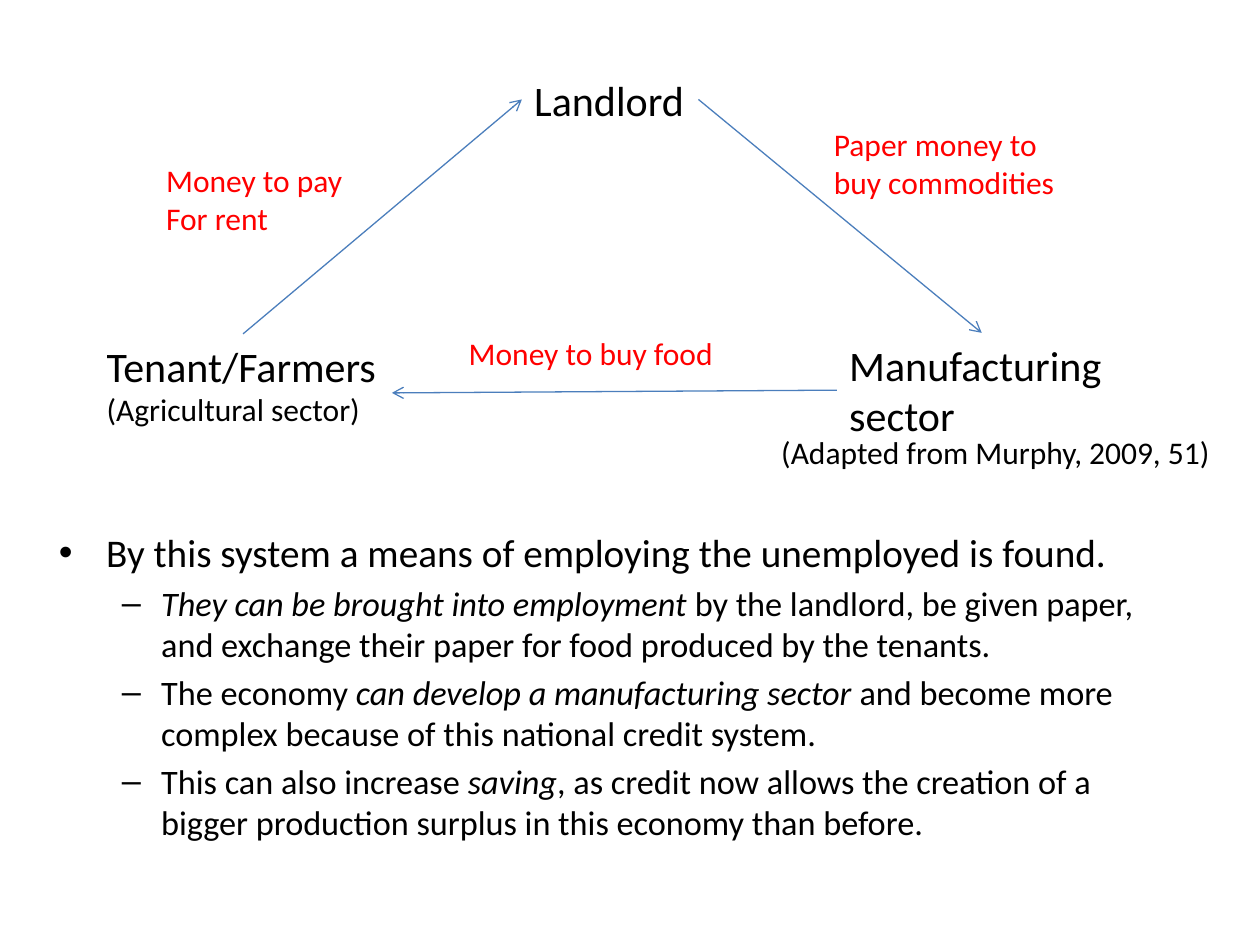
from lxml import etree
from pptx import Presentation
from pptx.dml.color import RGBColor
from pptx.enum.shapes import MSO_CONNECTOR
from pptx.enum.text import MSO_AUTO_SIZE
from pptx.oxml.ns import qn
from pptx.util import Cm, Pt

STRAIGHT = MSO_CONNECTOR.STRAIGHT
FIT_SHAPE = MSO_AUTO_SIZE.SHAPE_TO_FIT_TEXT
NO_FIT = MSO_AUTO_SIZE.NONE
TOP, LEFT, RIGHT = 0, 1, 3
COLORS = {"text": "000000", "flow": "FF0000", "arrow": "4B7EBC"}
BULLET_LEVELS = [
    {"size": 22.4, "margin": 0.95, "hanging": 0.95, "bullet": "•"},
    {"size": 19.6, "margin": 2.06, "hanging": 0.79, "bullet": "–"},
]
BULLETS = [
    (0, [("By this system a means of employing the unemployed is found.", False)]),
    (1, [("They can be brought into employment ", True),
         ("by the landlord, be given paper, and exchange their paper for food "
          "produced by the tenants.", False)]),
    (1, [("The economy ", False),
         ("can develop a manufacturing sector ", True),
         ("and become more complex because of this national credit system.", False)]),
    (1, [("This can also increase ", False),
         ("saving", True),
         (", as credit now allows the creation of a bigger production surplus "
          "in this economy than before.", False)]),
]


class SlideBuilder:
    """Draws labels, arrows and bullets on one slide in a shared style."""

    def __init__(self, slide, font="Calibri"):
        self.slide = slide
        self.font = font

    def style(self, paragraph, size, color):
        paragraph.font.name = self.font
        paragraph.font.size = Pt(size)
        paragraph.font.color.rgb = RGBColor.from_string(COLORS[color])

    def box(self, left, top, width, height, wrap, auto_size):
        shape = self.slide.shapes.add_textbox(Cm(left), Cm(top), Cm(width), Cm(height))
        shape.text_frame.word_wrap = wrap
        shape.text_frame.auto_size = auto_size
        return shape

    def label(self, place, lines, color="text"):
        shape = self.box(*place, wrap=False, auto_size=FIT_SHAPE)
        frame = shape.text_frame
        frame.text = "\n".join(text for text, _ in lines)
        for paragraph, (_, size) in zip(frame.paragraphs, lines):
            self.style(paragraph, size, color)
        return shape

    def arrow(self, start, start_side, end, end_side=None):
        connector = self.slide.shapes.add_connector(STRAIGHT, 0, 0, 0, 0)
        connector.begin_connect(start, start_side)
        if end_side is None:
            connector.end_x, connector.end_y = (Cm(value) for value in end)
        else:
            connector.end_connect(end, end_side)
        connector.line.width = Pt(0.75)
        connector.line.color.rgb = RGBColor.from_string(COLORS["arrow"])
        line = connector.line._get_or_add_ln()
        etree.SubElement(line, qn("a:tailEnd"), type="arrow")
        etree.SubElement(line.getparent(), qn("a:effectLst"))

    def bullets(self, place, items):
        frame = self.box(*place, wrap=True, auto_size=NO_FIT).text_frame
        for index, (level, runs) in enumerate(items):
            paragraph = frame.add_paragraph() if index else frame.paragraphs[0]
            look = BULLET_LEVELS[level]
            paragraph.level = level
            paragraph.space_before = Pt(round(look["size"] * 0.2, 1))
            self.style(paragraph, look["size"], "text")
            properties = paragraph._p.get_or_add_pPr()
            properties.set("marL", str(Cm(look["margin"])))
            properties.set("indent", str(-Cm(look["hanging"])))
            bullet_font = etree.Element(qn("a:buFont"), typeface="Arial")
            bullet = etree.Element(qn("a:buChar"), char=look["bullet"])
            defaults = properties.find(qn("a:defRPr"))
            defaults.addprevious(bullet_font)
            defaults.addprevious(bullet)
            for text, italic in runs:
                run = paragraph.add_run()
                run.text = text
                run.font.italic = italic


def main():
    presentation = Presentation()
    presentation.slide_width, presentation.slide_height = Cm(25.4), Cm(19.05)
    slide = presentation.slides.add_slide(presentation.slide_layouts[6])
    builder = SlideBuilder(slide)

    builder.bullets((0.94, 10.52, 22.86, 6.4), BULLETS)

    landlord = builder.label((10.52, 1.37, 3.56, 1.27), [("Landlord", 24)])
    manufacturing = builder.label(
        (16.87, 6.71, 5.84, 2.31), [("Manufacturing", 24), ("sector", 24)])
    tenants = builder.label(
        (1.9, 6.73, 6, 2.06), [("Tenant/Farmers", 24), ("(Agricultural sector)", 18)])

    builder.arrow(landlord, RIGHT, manufacturing, TOP)
    builder.arrow(manufacturing, LEFT, (7.9, 7.92))
    builder.arrow(tenants, TOP, landlord, LEFT)

    builder.label((16.56, 2.39, 5, 1.8),
                  [("Paper money to", 18), ("buy commodities", 18)], "flow")
    builder.label((9.2, 6.6, 5.49, 1.02), [("Money to buy food", 18)], "flow")
    builder.label((3.1, 3.12, 4.24, 1.8),
                  [("Money to pay", 18), ("For rent", 18)], "flow")
    builder.label((15.5, 8.61, 9.25, 1.02), [("(Adapted from Murphy, 2009, 51)", 18)])

    presentation.save("out.pptx")


if __name__ == "__main__":
    main()
